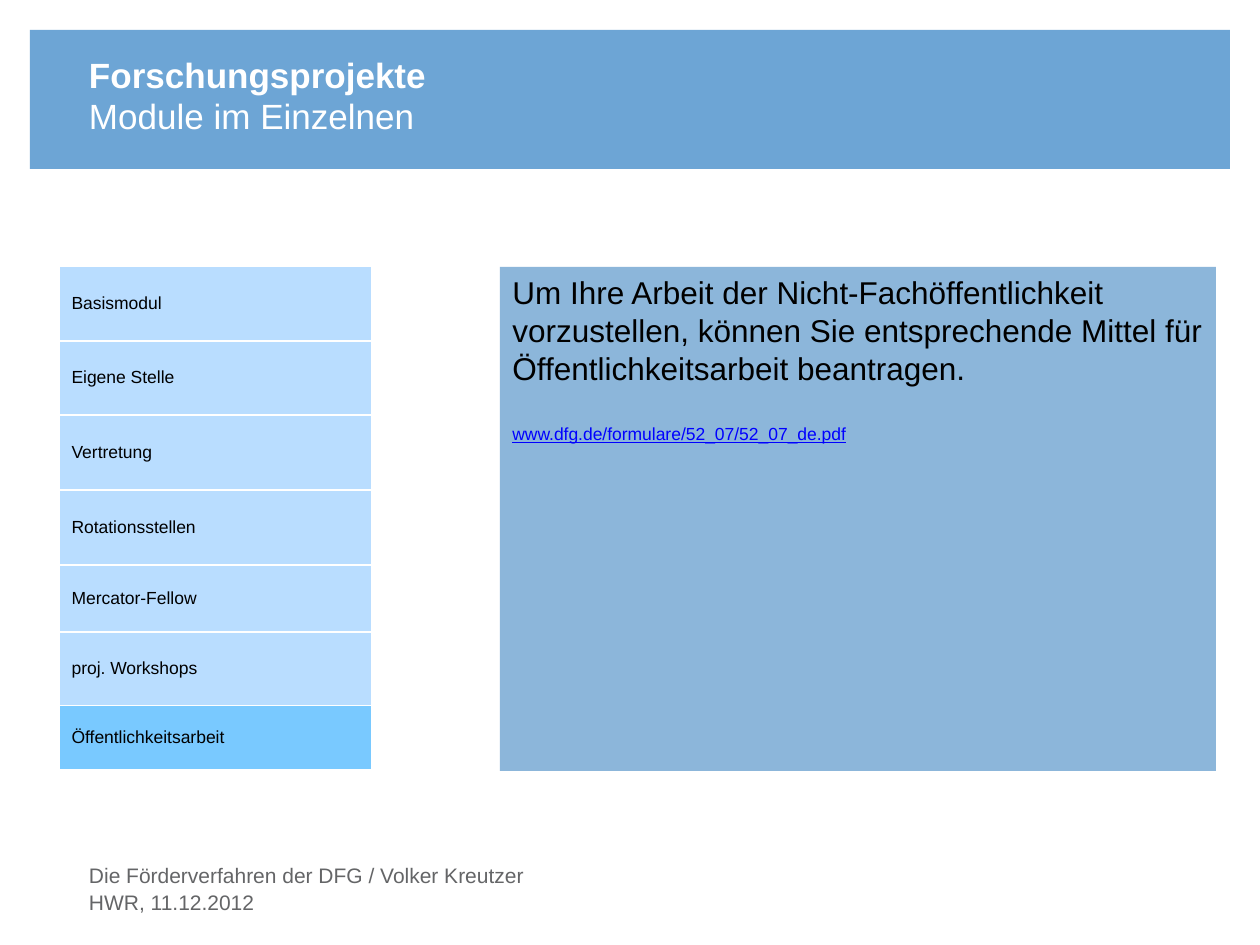
from pptx import Presentation
from pptx import util as u
from pptx.dml.color import RGBColor
from pptx.enum import shapes, text

SCALE = 914400 // 126
COLORS = {
    "header": "6DA5D5", "panel": "8CB6DA", "module": "B9DDFF", "active": "79C9FF",
    "white": "FFFFFF", "black": "000000", "link": "0000FF", "footer": "646567",
}
FONT = "Arial"

LABELS = [
    ("Forschungsprojekte", (89, 58, 1091, 38), 20, "white", True, 1, text.MSO_ANCHOR.BOTTOM),
    ("Module im Einzelnen", (89, 99, 1091, 38), 20, "white", False, 1.5, text.MSO_ANCHOR.BOTTOM),
    ("Die Förderverfahren der DFG / Volker Kreutzer", (89, 863, 876, 28), 12, "footer", False, 1,
     text.MSO_ANCHOR.TOP),
    ("HWR, 11.12.2012", (89, 890, 876, 34), 12, "footer", False, 1, text.MSO_ANCHOR.TOP),
]
MODULES = [
    ("Basismodul", 75), ("Eigene Stelle", 74), ("Vertretung", 75), ("Rotationsstellen", 75),
    ("Mercator-Fellow", 67), ("proj. Workshops", 74), ("Öffentlichkeitsarbeit", 64),
]
ACTIVE = "Öffentlichkeitsarbeit"
DESCRIPTION = ("Um Ihre Arbeit der Nicht-Fachöffentlichkeit vorzustellen, können Sie "
               "entsprechende Mittel für Öffentlichkeitsarbeit beantragen.")
ADDRESS = "www.dfg.de/formulare/52_07/52_07_de.pdf"


def px(*lengths):
    return [u.Emu(length * SCALE) for length in lengths]


def color(name):
    return RGBColor.from_string(COLORS[name])


def style(paragraph, size, name, bold=False, underline=False):
    font = paragraph.font
    font.name, font.size, font.bold, font.underline = FONT, u.Pt(size), bold, underline
    font.color.rgb = color(name)


def fill(target, name):
    target.fill.solid()
    target.fill.fore_color.rgb = color(name)


def add_rectangle(slide, box, name):
    shape = slide.shapes.add_shape(shapes.MSO_SHAPE.RECTANGLE, *px(*box))
    shape.shadow.inherit = False
    fill(shape, name)
    shape.line.fill.background()
    return shape


def add_label(slide, content, box, size, name, bold, spacing, anchor):
    frame = slide.shapes.add_textbox(*px(*box)).text_frame
    frame.margin_left = frame.margin_top = frame.margin_right = frame.margin_bottom = 0
    frame.word_wrap = True
    frame.vertical_anchor = anchor
    paragraph = frame.paragraphs[0]
    paragraph.text = content
    paragraph.line_spacing = spacing
    style(paragraph, size, name, bold)


def add_modules(slide):
    height = sum(row_height for _, row_height in MODULES)
    table = slide.shapes.add_table(len(MODULES), 1, *px(59, 266, 313, height)).table
    table.first_row = table.horz_banding = False
    for index, (module, row_height) in enumerate(MODULES):
        table.rows[index].height = px(row_height)[0]
        cell = table.cell(index, 0)
        cell.text = module
        cell.vertical_anchor = text.MSO_ANCHOR.MIDDLE
        fill(cell, "active" if module == ACTIVE else "module")
        style(cell.text_frame.paragraphs[0], 10, "black")


def add_panel(slide):
    frame = add_rectangle(slide, (500, 267, 716, 504), "panel").text_frame
    frame.word_wrap = True
    frame.vertical_anchor = text.MSO_ANCHOR.TOP
    description, address = frame.paragraphs[0], frame.add_paragraph()
    description.text, address.text = DESCRIPTION, ADDRESS
    description.alignment = address.alignment = text.PP_ALIGN.LEFT
    address.space_before = u.Pt(21)
    style(description, 18, "black")
    style(address, 10, "link", underline=True)


def main():
    presentation = Presentation()
    presentation.slide_width, presentation.slide_height = px(1260, 945)
    slide = presentation.slides.add_slide(presentation.slide_layouts[6])
    add_rectangle(slide, (30, 30, 1200, 139), "header")
    add_modules(slide)
    add_panel(slide)
    for label in LABELS:
        add_label(slide, *label)
    presentation.save("out.pptx")


if __name__ == "__main__":
    main()
